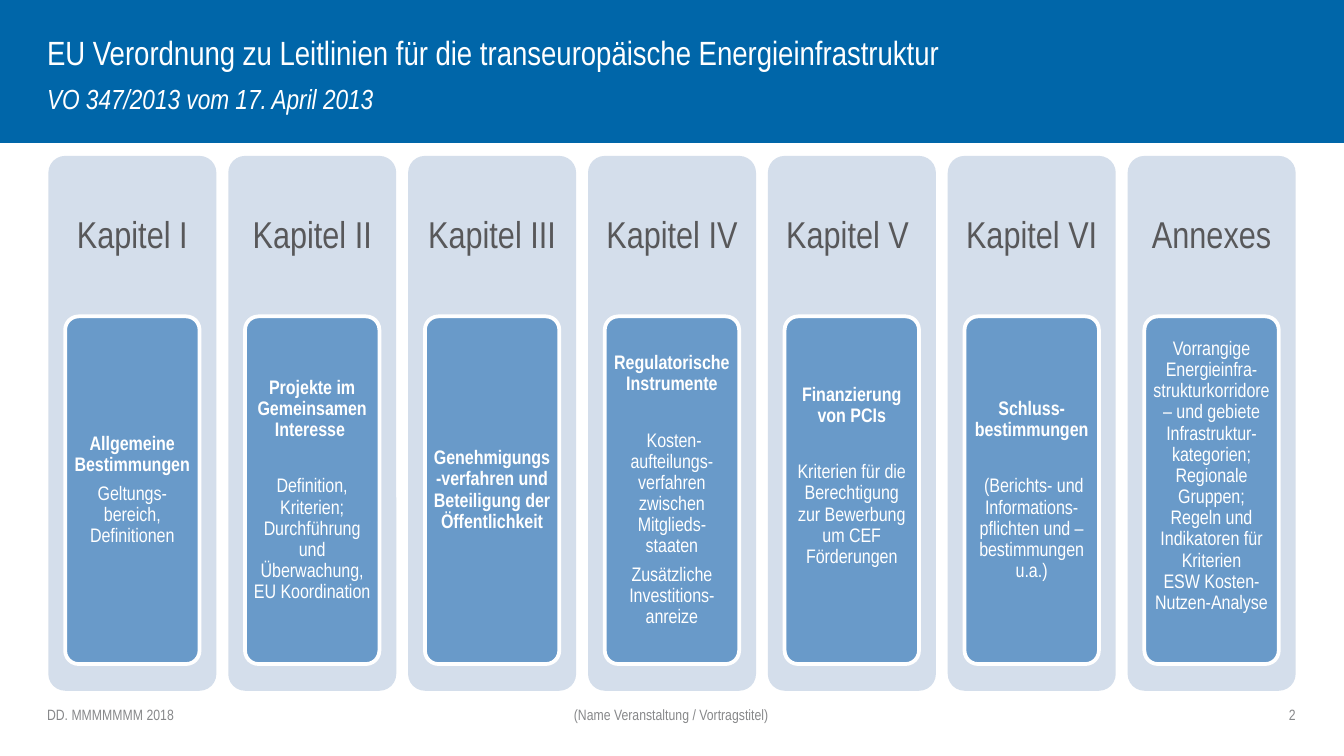
from pptx import Presentation
from pptx.dml.color import RGBColor
from pptx.enum.shapes import MSO_SHAPE
from pptx.enum.text import MSO_ANCHOR, MSO_AUTO_SIZE, PP_ALIGN
from pptx.oxml.ns import qn
from pptx.util import Inches, Pt

RECTANGLE, ROUNDED = MSO_SHAPE.RECTANGLE, MSO_SHAPE.ROUNDED_RECTANGLE
LEFT, CENTER, RIGHT = PP_ALIGN.LEFT, PP_ALIGN.CENTER, PP_ALIGN.RIGHT
MIDDLE, NO_FIT = MSO_ANCHOR.MIDDLE, MSO_AUTO_SIZE.NONE
FONT = "Arial Narrow"
BLUE = RGBColor(0x00, 0x66, 0xA9)
PALE = RGBColor(0xD4, 0xDE, 0xEB)
MID_BLUE = RGBColor(0x69, 0x9A, 0xC9)
WHITE = RGBColor(0xFF, 0xFF, 0xFF)
DARK_GRAY = RGBColor(0x58, 0x58, 0x5A)
GRAY = RGBColor(0x87, 0x88, 0x8A)
TIGHT, WIDE = 3.7, 18.8

# Each chapter: name, bold heading, gap after it, details, extra bottom inset.
CHAPTERS = [
    ("Kapitel I", "Allgemeine Bestimmungen", TIGHT,
     ["Geltungs-bereich, Definitionen"], 0),
    ("Kapitel II", "Projekte im Gemeinsamen Interesse ", WIDE,
     ["Definition, Kriterien; Durchführung und Überwachung, EU Koordination "], 0),
    ("Kapitel III", "Genehmigungs-verfahren und Beteiligung der Öffentlichkeit", TIGHT, [], 0),
    ("Kapitel IV", "Regulatorische Instrumente", WIDE,
     [" Kosten-aufteilungs-verfahren zwischen Mitglieds-staaten",
      "Zusätzliche Investitions-anreize"], 0),
    ("Kapitel V ", "Finanzierung von PCIs", WIDE,
     ["Kriterien für die Berechtigung zur Bewerbung um CEF Förderungen"], 0.21),
    ("Kapitel VI", "Schluss-bestimmungen", WIDE,
     [" (Berichts- und Informations-pflichten und –bestimmungen u.a.)"], 0),
    ("Annexes", None, TIGHT,
     ["Vorrangige Energieinfra-strukturkorridore – und gebiete\v"
      "Infrastruktur-kategorien; Regionale Gruppen; Regeln und Indikatoren für Kriterien\v"
      "ESW Kosten-Nutzen-Analyse"], 0.21),
]


def place(shape, left, top, width, height):
    """Move a shape to a box given in inches."""
    shape.left, shape.top = Inches(left), Inches(top)
    shape.width, shape.height = Inches(width), Inches(height)


def prepare_frame(shape, side=0, top=0, bottom=0):
    """Set wrapping, anchor and insets, and return the text frame."""
    frame = shape.text_frame
    frame.word_wrap, frame.auto_size, frame.vertical_anchor = True, NO_FIT, MIDDLE
    frame.margin_left = frame.margin_right = Inches(side)
    frame.margin_top, frame.margin_bottom = Inches(top), Inches(bottom)
    return frame


def write(para, text, size, color, align=LEFT, bold=False, italic=False):
    """Fill a paragraph and set its font."""
    para.text, para.alignment = text, align
    font = para.font
    font.name, font.size, font.color.rgb = FONT, Pt(size), color
    font.bold, font.italic = bold, italic


def add_panel(page, kind, box, fill, line=None, width=1):
    """Add a flat filled shape."""
    panel = page.shapes.add_shape(kind, *map(Inches, box))
    panel.shadow.inherit = False
    panel.fill.solid()
    panel.fill.fore_color.rgb = fill
    if line is None:
        panel.line.fill.background()
    else:
        panel.line.color.rgb, panel.line.width = line, Pt(width)
    if kind == ROUNDED:
        panel.adjustments[0] = 0.1
    return panel


def add_label(page, box, text, size, color, align, inset=0):
    """Add a one-paragraph text box and return its paragraph."""
    label = page.shapes.add_textbox(*map(Inches, box))
    para = prepare_frame(label, inset, inset, inset).paragraphs[0]
    write(para, text, size, color, align)
    return para


def add_header(page, left, top, width, height):
    """Draw the blue band with title and subtitle."""
    band = add_panel(page, RECTANGLE, (left, top, width, height), BLUE, BLUE)
    title, subtitle = page.shapes.title, page.placeholders[1]
    title.element.addprevious(band.element)
    place(title, left + 0.35, top + 0.21, 7.28, 0.39)
    place(subtitle, left + 0.35, top + 0.61, 7.28, 0.24)
    write(prepare_frame(title, bottom=0.04).paragraphs[0],
          "EU Verordnung zu Leitlinien für die transeuropäische Energieinfrastruktur", 18, WHITE)
    para = prepare_frame(subtitle).paragraphs[0]
    properties = para._p.get_or_add_pPr()
    properties.set("marL", "0")
    properties.set("indent", "0")
    properties.append(properties.makeelement(qn("a:buNone"), {}))
    para.space_before = Pt(0)
    write(para, "VO 347/2013 vom 17. April 2013", 14.8, WHITE, italic=True)


def add_chapter(page, left, top, width, height, chapter):
    """Draw one chapter column with its inner card."""
    name, heading, gap, details, lift = chapter
    add_panel(page, ROUNDED, (left, top, width, height), PALE)
    label = add_label(page, (left, top, width, 0.3 * height), name, 20, DARK_GRAY, CENTER, 0.08)
    label.line_spacing = 0.9
    card_box = (left + 0.1 * width, top + 0.3 * height, 0.8 * width, 0.65 * height)
    card = add_panel(page, ROUNDED, card_box, MID_BLUE, WHITE, 2)
    frame = prepare_frame(card, 0.03, 0.02, 0.02 + lift)
    entries = [(heading, True, gap)] if heading else []
    entries += [(detail, False, TIGHT) for detail in details]
    for index, (text, bold, after) in enumerate(entries):
        para = frame.add_paragraph() if index else frame.paragraphs[0]
        para.line_spacing, para.space_after = 0.9, Pt(after)
        write(para, text, 10.5, WHITE, CENTER, bold)


def add_chapters(page, left, top, width, height):
    """Spread the chapter columns evenly over a box."""
    column = 1.25
    pitch = (width - column) / (len(CHAPTERS) - 1)
    for index, chapter in enumerate(CHAPTERS):
        add_chapter(page, left + index * pitch, top, column, height, chapter)


def add_footer(page, left, top, width, height):
    """Write date, event name and page number."""
    side, middle = 1.18, 5.51
    for offset, span, text, align in [
        (0, side, "DD. MMMMMMM 2018", LEFT),
        ((width - middle) / 2, middle, "(Name Veranstaltung / Vortragstitel)", CENTER),
        (width - side, side, "2", RIGHT),
    ]:
        add_label(page, (left + offset, top, span, height), text, 8, GRAY, align)


def main():
    """Build and save the deck."""
    deck = Presentation()
    deck.slide_width = Inches(10)
    deck.slide_height = deck.slide_width * 9 // 16
    page = deck.slides.add_slide(deck.slide_layouts[1])
    add_header(page, 0, 0, 10, 1.06)
    add_chapters(page, 0.36, 1.16, 9.28, 3.98)
    add_footer(page, 0.35, 5.22, 9.29, 0.2)
    deck.save("out.pptx")


if __name__ == "__main__":
    main()
